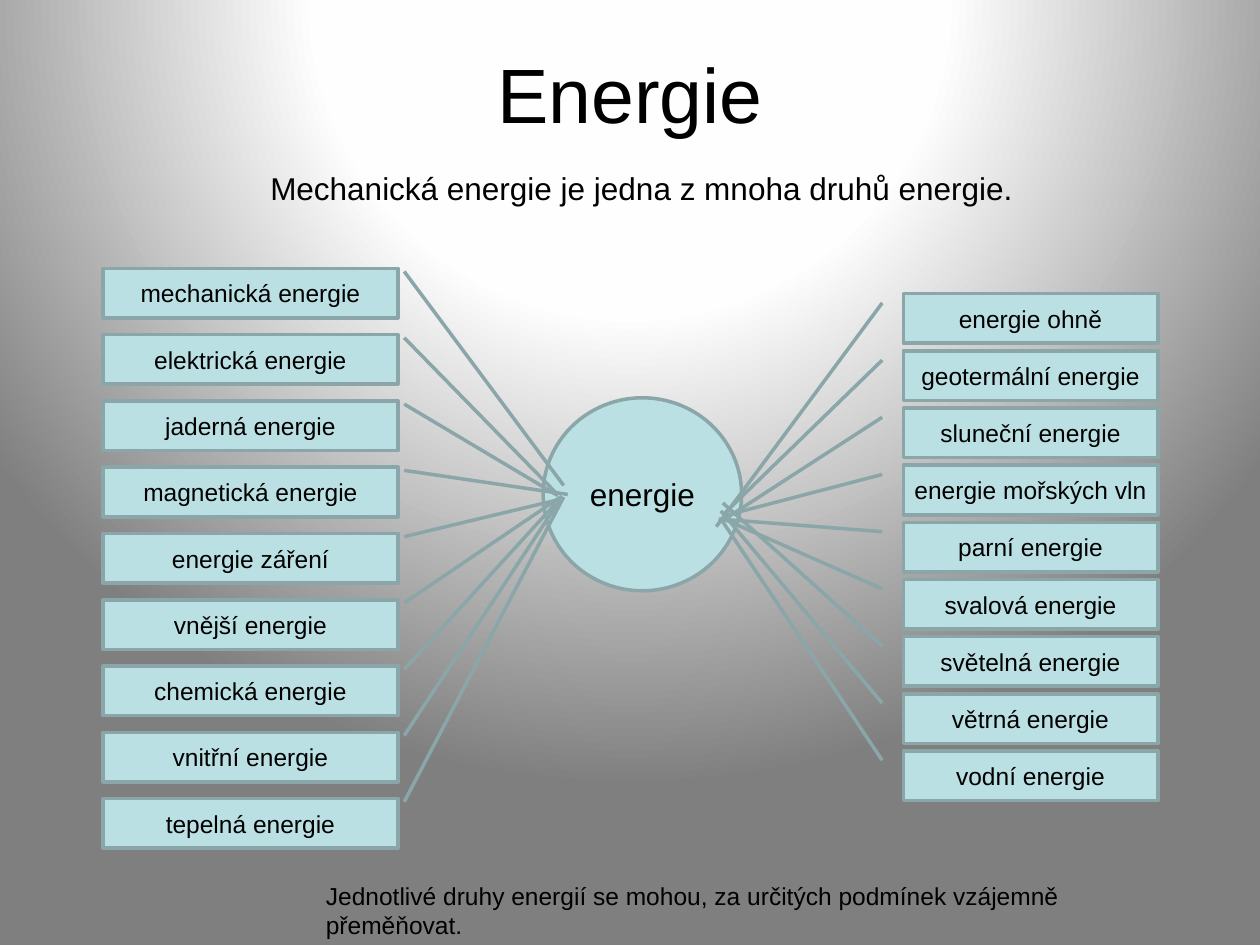
from pptx import Presentation
from pptx.dml.color import RGBColor
from pptx.enum.shapes import MSO_SHAPE
from pptx.enum.text import MSO_ANCHOR, PP_ALIGN
from pptx.oxml import parse_xml
from pptx.oxml.ns import nsdecls, qn
from pptx.util import Cm, Pt

# Each label with its leader end, as fractions of the box height and width
LEFT_ENERGIES = [
    ("mechanická energie", 4.377, 1.563),
    ("elektrická energie", 3.184, 1.536),
    ("jaderná energie", 1.907, 1.543),
    ("magnetická energie", 0.549, 1.577),
    ("energie záření", -0.687, 1.55),
    ("vnější energie", -2.086, 1.556),
    ("chemická energie", -3.28, 1.536),
    ("vnitřní energie", -4.68, 1.55),
    ("tepelná energie", -6.08, 1.563),
]
RIGHT_ENERGIES = [
    ("energie ohně", 4.697, -0.735),
    ("geotermální energie", 3.308, -0.709),
    ("sluneční energie", 2.266, -0.709),
    ("energie mořských vln", 1.026, -0.709),
    ("parní energie", -0.066, -0.726),
    ("svalová energie", -1.207, -0.7),
    ("světelná energie", -2.695, -0.709),
    ("větrná energie", -3.688, -0.717),
    ("vodní energie", -4.68, -0.717),
]


def color(hex_code):
    return RGBColor.from_string(hex_code)


def write(frame, text, size=14, font="Arial", ink="000000",
          align=PP_ALIGN.LEFT, anchor=MSO_ANCHOR.TOP, wrap=True):
    frame.word_wrap = wrap
    frame.vertical_anchor = anchor
    para = frame.paragraphs[0]
    para.alignment = align
    span = para.add_run()
    span.text = text
    span.font.size = Pt(size)
    span.font.name = font
    span.font.color.rgb = color(ink)


class EnergyMap:
    fill = "BBE0E3"
    line = "8AA6A8"
    centred = {"align": PP_ALIGN.CENTER, "anchor": MSO_ANCHOR.MIDDLE}

    def __init__(self, page):
        self.page = page

    def background(self, stops):
        self.page.background.fill.solid()
        marks = "".join(
            f'<a:gs pos="{place * 1000}"><a:srgbClr val="{code}"/></a:gs>'
            for place, code in stops)
        gradient = parse_xml(
            f'<a:gradFill {nsdecls("a")} rotWithShape="1"><a:gsLst>{marks}</a:gsLst>'
            '<a:path path="circle"><a:fillToRect l="50000" t="-80000" '
            'r="50000" b="180000"/></a:path></a:gradFill>')
        solid = next(self.page.element.iter(qn("a:solidFill")))
        solid.getparent().replace(solid, gradient)

    def title(self, text, left, top, width, height):
        box = self.page.shapes.title
        box.left, box.top, box.width, box.height = map(Cm, (left, top, width, height))
        write(box.text_frame, text, size=44, **self.centred)

    def text(self, text, left, top, width, height, **style):
        box = self.page.shapes.add_textbox(*map(Cm, (left, top, width, height)))
        write(box.text_frame, text, **style)

    def shape(self, kind, text, left, top, width, height, **style):
        box = self.page.shapes.add_shape(kind, *map(Cm, (left, top, width, height)))
        box.shadow.inherit = False
        box.fill.solid()
        box.fill.fore_color.rgb = color(self.fill)
        box.line.color.rgb = color(self.line)
        box.line.width = Pt(2)
        write(box.text_frame, text, **self.centred, **style)
        return box

    def callouts(self, energies, left, first_top, last_top, width, start, tight=False):
        step = (last_top - first_top) / (len(energies) - 1)
        for row, (text, *end) in enumerate(energies):
            box = self.shape(MSO_SHAPE.LINE_CALLOUT_1, text, left,
                             first_top + row * step, width, 1, wrap=not tight)
            for index, value in enumerate([*start, *end]):
                box.adjustments[index] = value
            if tight:
                frame = box.text_frame
                frame.margin_left = frame.margin_right = 0
                frame.margin_top = frame.margin_bottom = 0


def main():
    deck = Presentation()
    deck.slide_width, deck.slide_height = Cm(25.4), Cm(19.05)
    chart = EnergyMap(deck.slides.add_slide(deck.slide_layouts[5]))

    # Background and heading
    chart.background([(0, "FFFFFF"), (40, "FEFEFE"), (100, "7F7F7F")])
    chart.title("Energie", 1.27, 0.28, 22.86, 3.18)

    # Centre and introduction
    chart.shape(MSO_SHAPE.OVAL, "energie", 10.95, 8.02, 4, 3.89, size=18)
    chart.text("Mechanická energie je jedna z mnoha druhů energie.",
               5.2, 3.28, 15.6, 1.02, size=18)

    # Kinds of energy on both sides, with leaders to the centre
    chart.callouts(RIGHT_ENERGIES, 18.21, 5.92, 15.14, 5.13, (0.188, -0.083), tight=True)
    chart.callouts(LEFT_ENERGIES, 2.08, 5.41, 16.1, 5.94, (0.064, 1.022))

    # Closing remark
    chart.text("Jednotlivé druhy energií se mohou, za určitých podmínek "
               "vzájemně přeměňovat.", 6.32, 17.63, 18.14, 0.86)

    deck.save("out.pptx")


if __name__ == "__main__":
    main()
